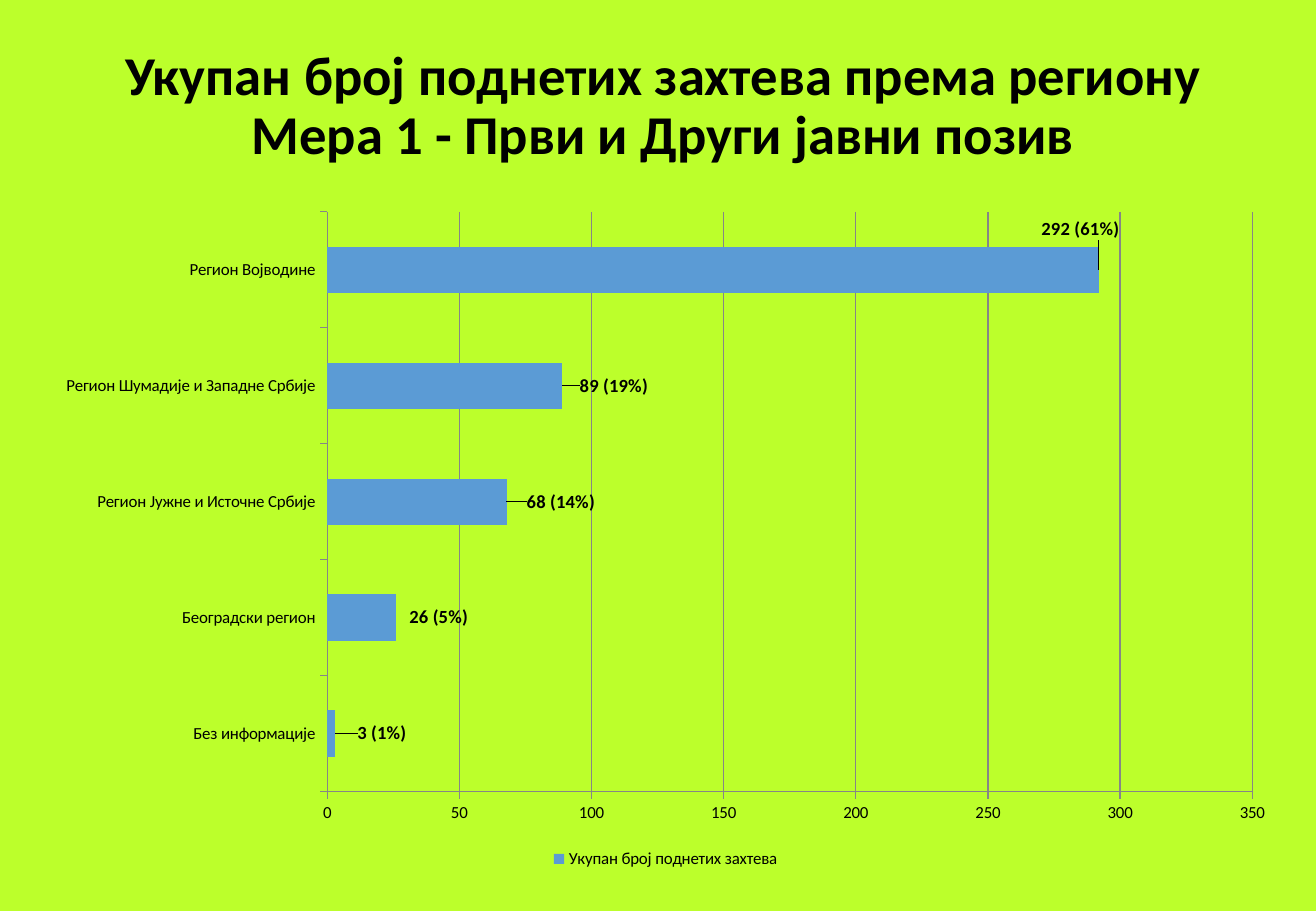
from lxml import etree
from pptx import Presentation
from pptx.chart.data import CategoryChartData
from pptx.dml.color import RGBColor
from pptx.enum.chart import XL_CHART_TYPE, XL_LABEL_POSITION, XL_LEGEND_POSITION, XL_TICK_MARK
from pptx.enum.text import MSO_ANCHOR, MSO_AUTO_SIZE, PP_ALIGN
from pptx.oxml.ns import qn
from pptx.util import Pt

BAR_CLUSTERED = XL_CHART_TYPE.BAR_CLUSTERED
OUTSIDE_END = XL_LABEL_POSITION.OUTSIDE_END
LEGEND_BOTTOM = XL_LEGEND_POSITION.BOTTOM
TICK_OUTSIDE = XL_TICK_MARK.OUTSIDE
MIDDLE = MSO_ANCHOR.MIDDLE
NO_AUTOFIT = MSO_AUTO_SIZE.NONE
CENTER = PP_ALIGN.CENTER

FONT = "Calibri"
COLORS = {name: RGBColor.from_string(value) for name, value in {
    "background": "BCFF2B", "text": "000000", "bar": "5B9BD5", "line": "868686",
}.items()}

REGIONS = [
    ("Без информације", 3, "3 (1%)", 0.014, 0),
    ("Београдски регион", 26, "26 (5%)", 0.007, 0),
    ("Регион Јужне и Источне Србије", 68, "68 (14%)", 0.012, 0),
    ("Регион Шумадије и Западне Србије", 89, "89 (19%)", 0.01, 0),
    ("Регион Војводине", 292, "292 (61%)", -0.05, -0.06),
]


def style_font(font, size, bold):
    font.name = FONT
    font.size = Pt(size)
    font.bold = bold
    font.color.rgb = COLORS["text"]


def add_layout(parent, position, settings):
    layout = etree.Element(qn("c:layout"))
    manual = etree.SubElement(layout, qn("c:manualLayout"))
    for tag, value in settings.items():
        etree.SubElement(manual, qn(f"c:{tag}")).set("val", str(value))
    parent.insert(position, layout)


presentation = Presentation()
presentation.slide_width = Pt(780)
presentation.slide_height = Pt(540)
slide = presentation.slides.add_slide(presentation.slide_layouts[5])
slide.background.fill.solid()
slide.background.fill.fore_color.rgb = COLORS["background"]

title = slide.shapes.title
title.left, title.top, title.width, title.height = Pt(34.5), Pt(21.6), Pt(717), Pt(93.6)
title_frame = title.text_frame
title_frame.word_wrap = True
title_frame.auto_size = NO_AUTOFIT
title_frame.vertical_anchor = MIDDLE
title_frame.margin_bottom = Pt(12.8)
title_frame.text = "Укупан број поднетих захтева према региону\vМера 1 - Први и Други јавни позив"
paragraph = title_frame.paragraphs[0]
paragraph.alignment = CENTER
paragraph.line_spacing = 0.9
for run in paragraph.runs:
    style_font(run.font, 32.4, True)

chart_data = CategoryChartData(number_format="#,##0")
chart_data.categories = [region[0] for region in REGIONS]
chart_data.add_series("Укупан број поднетих захтева", [region[1] for region in REGIONS])
chart = slide.shapes.add_chart(
    BAR_CLUSTERED, Pt(24.5), Pt(118), Pt(740), Pt(399.6), chart_data
).chart
style_font(chart.font, 10, False)
chart.has_title = False
chart.has_legend = True
chart.legend.position = LEGEND_BOTTOM
chart.legend.include_in_layout = False

plot_area = chart._chartSpace.chart.plotArea
for layout in plot_area.findall(qn("c:layout")):
    plot_area.remove(layout)
add_layout(plot_area, 0, {
    "layoutTarget": "inner", "xMode": "edge", "yMode": "edge",
    "x": 0.229, "y": 0.019, "w": 0.741, "h": 0.86,
})

value_axis = chart.value_axis
value_axis.minimum_scale = 0
value_axis.maximum_scale = 350
value_axis.major_unit = 50
value_axis.has_major_gridlines = True
value_axis.tick_labels.number_format = "#,##0"
value_axis.tick_labels.number_format_is_linked = False
for axis in (chart.category_axis, value_axis):
    axis.major_tick_mark = TICK_OUTSIDE
    axis.format.line.color.rgb = COLORS["line"]
    axis.format.line.width = Pt(0.75)
value_axis.major_gridlines.format.line.color.rgb = COLORS["line"]
value_axis.major_gridlines.format.line.width = Pt(0.75)

plot = chart.plots[0]
plot.gap_width = 150
plot.vary_by_categories = False
series = plot.series[0]
series.format.fill.solid()
series.format.fill.fore_color.rgb = COLORS["bar"]
labels = series.data_labels
labels.show_value = True
labels.number_format = "#,##0"
labels.number_format_is_linked = False
labels.position = OUTSIDE_END
style_font(labels.font, 11, True)

for index, (region, count, caption, shift_x, shift_y) in enumerate(REGIONS):
    label = series.points[index].data_label
    label.text_frame.text = caption
    style_font(label.text_frame.paragraphs[0].runs[0].font, 11, True)
    label.position = OUTSIDE_END
    add_layout(labels._element.findall(qn("c:dLbl"))[index], 1, {"x": shift_x, "y": shift_y})

presentation.save("out.pptx")
